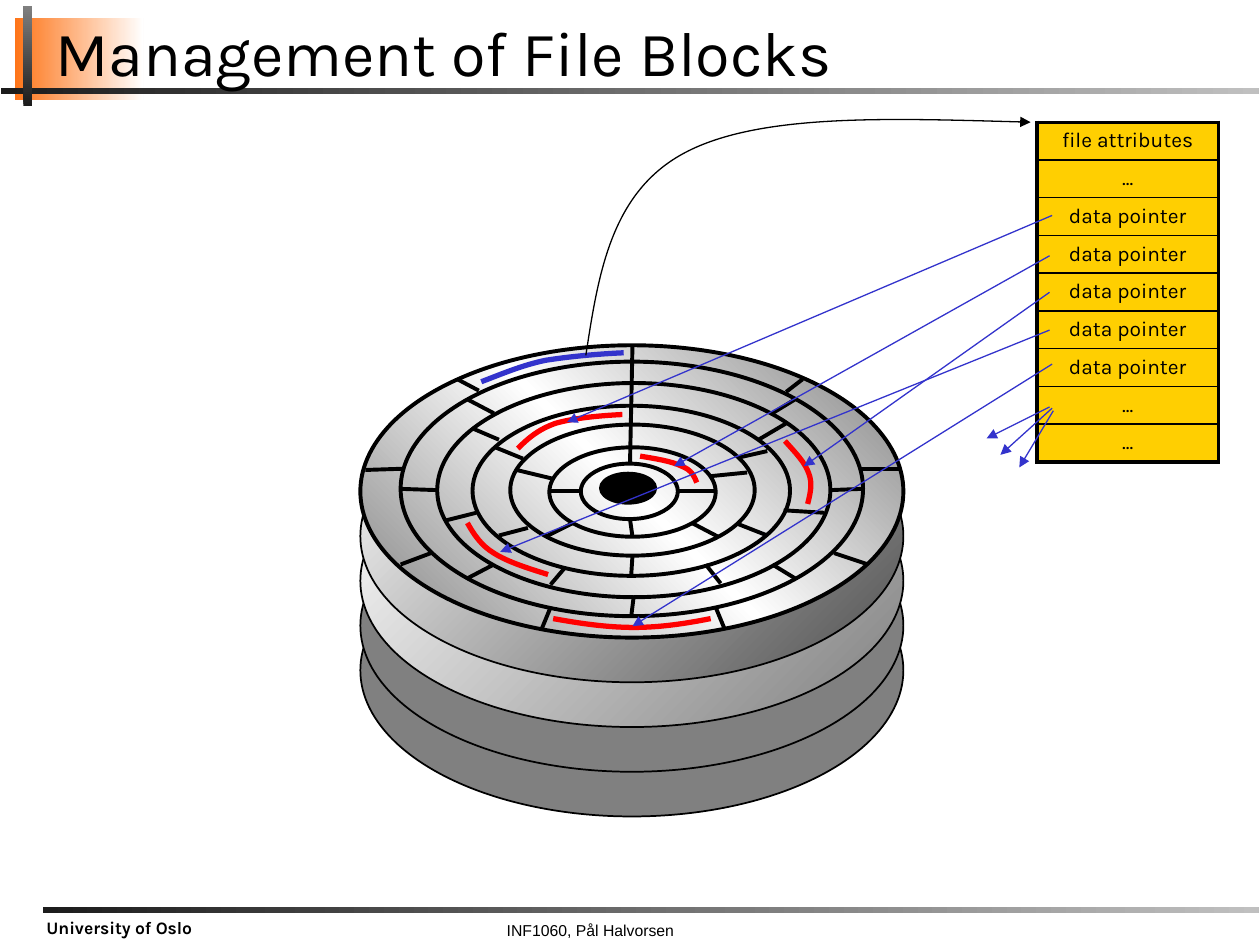
from typing import NamedTuple, Optional

from lxml import etree
from pptx import Presentation
from pptx import util as u
from pptx.dml.color import RGBColor
from pptx.enum import shapes, text
from pptx.oxml import ns

BLACK, BLUE, RED, GREY = "000000", "3333CC", "FF0000", "808080"
YELLOW, WHITE = "FFCF01", "FFFFFF"


class Bar(NamedTuple):
    left: float
    top: float
    width: float
    height: float
    stops: tuple
    rotation: int = 0


class Label(NamedTuple):
    wording: str
    left: float
    top: float
    width: float
    height: float
    size: float
    font: str = "Karla"
    bold: bool = False
    align: text.PP_ALIGN = text.PP_ALIGN.LEFT
    anchor: text.MSO_ANCHOR = text.MSO_ANCHOR.TOP
    inset_top: float = 0.03
    inset_right: float = 0.1
    spacing: Optional[float] = None


class Platter(NamedTuple):
    stops: tuple
    angle: int = 0


class Curve(NamedTuple):
    """A chain of cubic segments: start point, then three points each."""
    points: tuple
    color: str = RED
    width: float = 3
    arrow: bool = False


BARS = (
    Bar(0.12, 0.14, 1.02, 0.65, ("FE7519", WHITE)),
    Bar(0.01, 0.70, 9.98, 0.05, ("1C1C1C", "C0C0C0")),
    Bar(-0.18, 0.41, 0.80, 0.07, ("1C1C1C", GREY), 270),
    Bar(0.34, 7.20, 9.65, 0.05, ("1C1C1C", "C0C0C0")),
)
LABELS = (
    Label("INF1060, Pål Halvorsen", 1.89, 7.28, 5.59, 0.23, 9, "Arial",
          align=text.PP_ALIGN.CENTER),
    Label("University of Oslo", 0.27, 7.25, 1.63, 0.24, 10, bold=True),
    Label("Management of File Blocks", 0.34, 0.14, 9.62, 0.61, 36,
          anchor=text.MSO_ANCHOR.BOTTOM, inset_top=0.05, inset_right=0.04,
          spacing=0.8),
)
PLATTERS = (  # bottom to top
    Platter((GREY,)),
    Platter((GREY,)),
    Platter((WHITE, GREY), 45),
    Platter((WHITE, "4F4F4F"), 45),
    Platter((GREY, WHITE, GREY), 315),
)
DISK_LEFT, DISK_TOP, DISK_WIDTH, DISK_HEIGHT = 2.86, 2.74, 4.31, 2.32
PLATTER_GAP = 0.355
HUB = (4.77, 3.76, 0.43, 0.23)
TRACKS = (
    (DISK_LEFT, DISK_TOP, DISK_WIDTH, DISK_HEIGHT), (3.18, 2.87, 3.67, 2.02),
    (3.47, 3.04, 3.12, 1.70), (3.75, 3.22, 2.52, 1.35),
    (4.05, 3.37, 1.94, 1.04), (4.36, 3.55, 1.32, 0.71),
    (4.61, 3.68, 0.77, 0.44),
)
SECTOR_LINES = (
    (3.47, 3.89, 3.18, 3.88), (6.59, 3.89, 6.84, 3.88), (5.03, 4.73, 5.01, 4.89),
    (5.01, 4.56, 5.02, 4.41), (3.92, 4.48, 3.71, 4.59), (6.13, 4.48, 6.31, 4.59),
    (6.13, 3.28, 6.31, 3.17), (3.92, 3.28, 3.71, 3.17), (5.38, 3.90, 5.68, 3.90),
    (5.00, 4.12, 5.02, 4.26), (4.61, 3.90, 4.36, 3.90), (4.55, 4.15, 4.33, 4.26),
    (5.49, 4.15, 5.70, 4.26), (5.00, 3.68, 5.02, 2.74), (5.63, 3.78, 5.93, 3.75),
    (5.87, 3.63, 6.09, 3.58), (6.02, 3.49, 6.24, 3.36), (6.24, 3.11, 6.37, 3.01),
    (6.83, 3.72, 7.15, 3.72), (6.22, 4.05, 6.54, 4.07), (6.62, 4.39, 6.89, 4.48),
    (5.86, 4.16, 6.09, 4.25), (5.60, 4.48, 5.72, 4.63), (5.68, 4.82, 5.75, 4.99),
    (4.37, 4.82, 4.30, 4.99), (4.48, 4.51, 4.37, 4.64), (4.19, 4.19, 3.96, 4.25),
    (3.42, 4.39, 3.18, 4.48), (3.78, 4.07, 3.54, 4.13), (4.39, 3.80, 4.10, 3.73),
    (4.15, 3.64, 3.93, 3.55), (3.96, 3.49, 3.75, 3.40), (3.80, 3.10, 3.63, 3.01),
    (3.21, 3.72, 2.90, 3.73),
)
INODE_ROWS = ("file attributes", "...") + ("data pointer",) * 5 + ("...",) * 2
CURVES = (
    Curve(((3.71, 4.15), (3.76, 4.24), (3.82, 4.33), (3.92, 4.39),
           (4.03, 4.46), (4.19, 4.51), (4.35, 4.56))),
    Curve(((4.39, 4.91), (4.61, 4.95), (4.82, 4.98), (5.03, 4.98),
           (5.24, 4.98), (5.44, 4.95), (5.64, 4.91))),
    Curve(((6.41, 4.00), (6.43, 3.92), (6.45, 3.84), (6.42, 3.76),
           (6.39, 3.67), (6.31, 3.59), (6.23, 3.50))),
    Curve(((5.08, 3.62), (5.20, 3.64), (5.33, 3.66), (5.41, 3.70),
           (5.49, 3.73), (5.51, 3.78), (5.53, 3.83))),
    Curve(((4.11, 3.56), (4.19, 3.48), (4.27, 3.41), (4.41, 3.36),
           (4.55, 3.32), (4.74, 3.30), (4.94, 3.29))),
    Curve(((3.82, 3.03), (3.98, 2.97), (4.14, 2.90), (4.33, 2.86),
           (4.52, 2.83), (4.74, 2.81), (4.95, 2.80)), BLUE),
    Curve(((4.65, 2.82), (4.75, 2.17), (4.85, 1.52), (5.44, 1.21),
           (6.03, 0.90), (7.10, 0.94), (8.18, 0.97)), BLACK, 0.75, True),
)
POINTERS = (
    (8.33, 3.23, 7.83, 3.48), (8.35, 3.24, 7.94, 3.61), (8.36, 3.26, 8.09, 3.71),
    (8.35, 1.71, 4.50, 3.35), (8.33, 2.03, 5.35, 3.70), (8.33, 2.32, 6.38, 3.70),
    (8.33, 2.62, 3.97, 4.38), (8.35, 2.89, 5.02, 4.97),
)


def rgb(color: str) -> RGBColor:
    return RGBColor.from_string(color)


def inches(values) -> list:
    return [u.Inches(value) for value in values]


def add_child(parent, tag: str, **attributes):
    return etree.SubElement(parent, ns.qn(tag), **attributes)


def paint(shape, stops: tuple, angle: int = 0) -> None:
    """Fill with nothing, one colour, or evenly spaced clockwise gradient stops."""
    if not stops:
        shape.fill.background()
    elif len(stops) == 1:
        shape.fill.solid()
        shape.fill.fore_color.rgb = rgb(stops[0])
    else:
        shape.fill.gradient()
        shape.fill.gradient_angle = (360 - angle) % 360
        stop_list = shape.element.spPr.find(".//" + ns.qn("a:gsLst"))
        for stop in list(stop_list):
            stop_list.remove(stop)
        for index, color in enumerate(stops):
            position = str(100000 * index // (len(stops) - 1))
            stop = add_child(stop_list, "a:gs", pos=position)
            add_child(stop, "a:srgbClr", val=color)


def stroke(line, color: str, width: float) -> None:
    line.color.rgb = rgb(color)
    line.width = u.Pt(width)


def add_arrowhead(shape) -> None:
    add_child(shape.element.spPr.find(ns.qn("a:ln")), "a:tailEnd", type="triangle")


def add_ellipse(parent, frame, width: float, stops: tuple = (), angle: int = 0) -> None:
    ellipse = parent.add_shape(shapes.MSO_SHAPE.OVAL, *inches(frame))
    ellipse.shadow.inherit = False
    paint(ellipse, stops, angle)
    stroke(ellipse.line, BLACK, width)


def add_line(parent, ends, color: str, width: float, arrow: bool = False) -> None:
    line = parent.add_connector(shapes.MSO_CONNECTOR.STRAIGHT, *inches(ends))
    stroke(line.line, color, width)
    if arrow:
        add_arrowhead(line)
    add_child(line.element.spPr, "a:effectLst")


def add_bar(page, bar: Bar) -> None:
    box = page.shapes.add_shape(shapes.MSO_SHAPE.RECTANGLE, *inches(bar[:4]))
    box.shadow.inherit = False
    box.rotation = bar.rotation
    paint(box, bar.stops)
    box.line.fill.background()


def add_span(para, wording: str, size: float, font: str, bold: bool = False) -> None:
    span = para.add_run()
    span.text = wording
    span.font.size, span.font.name, span.font.bold = u.Pt(size), font, bold
    span.font.color.rgb = rgb(BLACK)


def add_label(page, label: Label) -> None:
    frame = page.shapes.add_textbox(*inches(label[1:5])).text_frame
    frame.word_wrap = True
    frame.vertical_anchor = label.anchor
    frame.margin_top = u.Inches(label.inset_top)
    frame.margin_right = u.Inches(label.inset_right)
    para = frame.paragraphs[0]
    para.alignment, para.line_spacing = label.align, label.spacing
    add_span(para, label.wording, label.size, label.font, label.bold)


def add_curve(page, curve: Curve) -> None:
    start, *rest = [tuple(inches(point)) for point in curve.points]
    builder = page.shapes.build_freeform(*start)
    builder.add_line_segments(rest, close=False)
    shape = builder.convert_to_shape()
    segments = shape.element.spPr.findall(".//" + ns.qn("a:lnTo"))
    for first in range(0, len(segments), 3):
        outline = segments[first].getparent()
        bezier = add_child(outline, "a:cubicBezTo")
        for segment in segments[first:first + 3]:
            bezier.append(segment[0])
            outline.remove(segment)
    shape.shadow.inherit = False
    paint(shape, ())
    stroke(shape.line, curve.color, curve.width)
    if curve.arrow:
        add_arrowhead(shape)


def add_borders(cell, top: float, bottom: float) -> None:
    properties = cell._tc.get_or_add_tcPr()
    widths = {"a:lnL": 2.25, "a:lnR": 2.25, "a:lnT": top, "a:lnB": bottom}
    for index, (tag, width) in enumerate(widths.items()):
        border = add_child(properties, tag, w=str(u.Pt(width)))
        add_child(add_child(border, "a:solidFill"), "a:srgbClr", val=BLACK)
        properties.insert(index, border)


def add_inode_table(page) -> None:
    count = len(INODE_ROWS)
    table = page.shapes.add_table(count, 1, *inches((8.23, 0.97, 1.44, 0.3 * count))).table
    table.first_row = table.horz_banding = False
    for index, wording in enumerate(INODE_ROWS):
        cell = table.cell(index, 0)
        paint(cell, (YELLOW,))
        add_borders(cell, 2.25 if index == 0 else 1, 2.25 if index == count - 1 else 1)
        para = cell.text_frame.paragraphs[0]
        para.alignment = text.PP_ALIGN.CENTER
        add_span(para, wording, 12, "Karla")


def add_disk(page) -> None:
    for level, platter in enumerate(reversed(PLATTERS[1:])):
        pass
    for index, platter in enumerate(PLATTERS):
        top = DISK_TOP + PLATTER_GAP * (len(PLATTERS) - 1 - index)
        add_ellipse(page.shapes, (DISK_LEFT, top, DISK_WIDTH, DISK_HEIGHT), 1,
                    platter.stops, platter.angle)
    surface = page.shapes.add_group_shape().shapes
    add_ellipse(surface, HUB, 2.25, (BLACK,))
    for track in TRACKS:
        add_ellipse(surface, track, 2.25)
    for ends in SECTOR_LINES:
        add_line(surface, ends, BLACK, 2.25)


def main() -> None:
    deck = Presentation()
    deck.slide_width, deck.slide_height = inches((10, 7.5))
    page = deck.slides.add_slide(deck.slide_layouts[6])
    for bar in BARS:
        add_bar(page, bar)
    add_disk(page)
    add_inode_table(page)
    for curve in CURVES:
        add_curve(page, curve)
    for ends in POINTERS:
        add_line(page.shapes, ends, BLUE, 0.75, arrow=True)
    for label in LABELS:
        add_label(page, label)
    deck.save("out.pptx")


if __name__ == "__main__":
    main()
